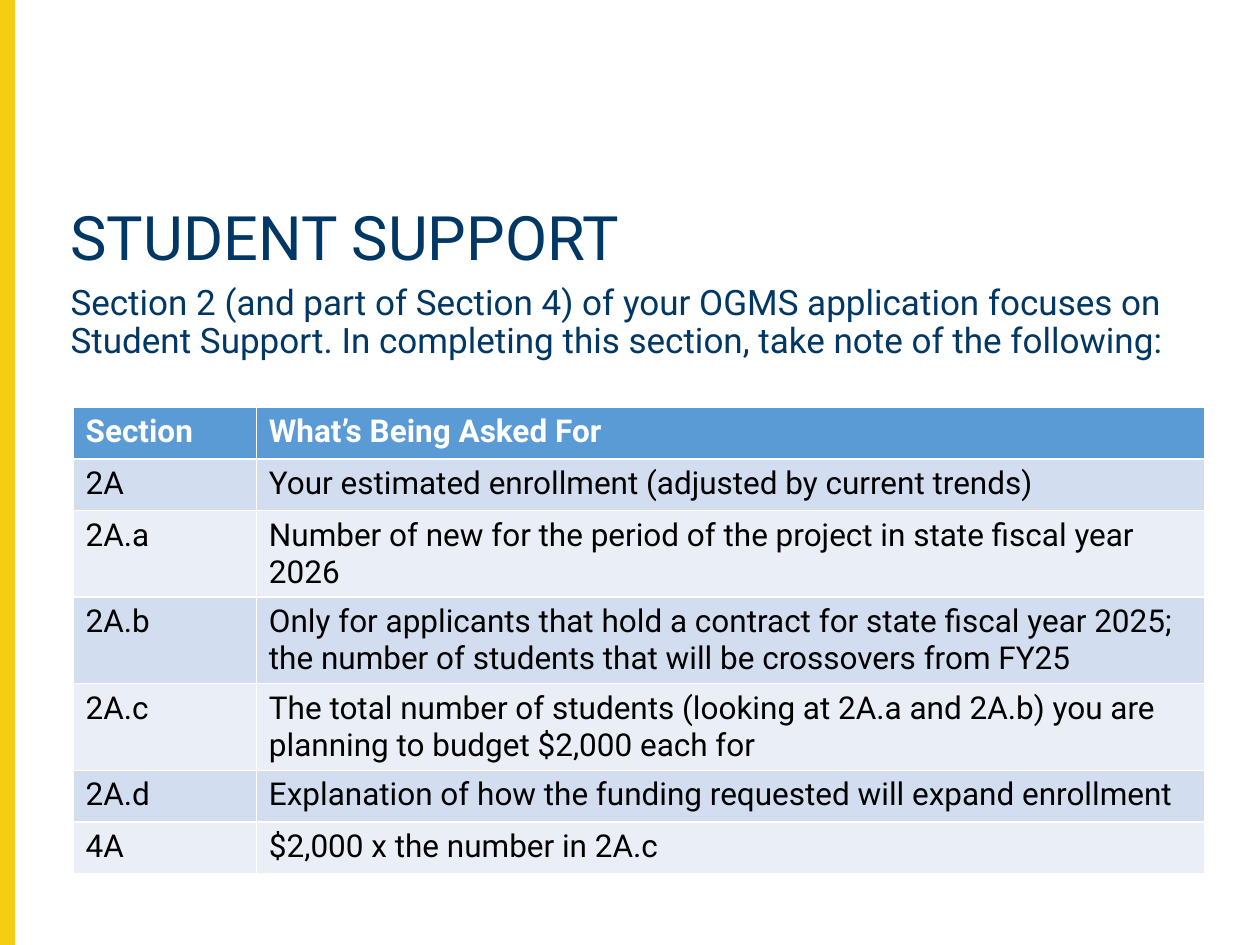
from typing import NamedTuple

from pptx import Presentation
from pptx.dml.color import RGBColor
from pptx.enum.shapes import MSO_SHAPE
from pptx.enum.text import MSO_ANCHOR, MSO_AUTO_SIZE, PP_ALIGN
from pptx.util import Inches, Pt

RECT = MSO_SHAPE.RECTANGLE
TOP = MSO_ANCHOR.TOP
LEFT = PP_ALIGN.LEFT
FIXED = MSO_AUTO_SIZE.NONE

WIDE, HIGH = Inches(10), Inches(7.5)
HEX = {"gold": "F4CE12", "navy": "003764", "head": "5B9BD5", "odd": "D2DEEF",
       "even": "EAEFF7", "white": "FFFFFF", "black": "000000"}
INTRO = ("Section 2 (and part of Section 4) of your OGMS application focuses on "
         "Student Support. In completing this section, take note of the following:")


class Box(NamedTuple):
    """Left, top, width and height as shares of the slide."""
    left: float
    top: float
    width: float
    height: float

    def place(self) -> dict:
        return {"left": round(self.left * WIDE), "top": round(self.top * HIGH),
                "width": round(self.width * WIDE), "height": round(self.height * HIGH)}


class Row(NamedTuple):
    section: str
    ask: str


ROWS = [
    Row("Section", "What’s Being Asked For"),
    Row("2A", "Your estimated enrollment (adjusted by current trends)"),
    Row("2A.a", "Number of new for the period of the project in state fiscal year 2026"),
    Row("2A.b", "Only for applicants that hold a contract for state fiscal year 2025; "
                "the number of students that will be crossovers from FY25"),
    Row("2A.c", "The total number of students (looking at 2A.a and 2A.b) you are "
                "planning to budget $2,000 each for"),
    Row("2A.d", "Explanation of how the funding requested will expand enrollment"),
    Row("4A", "$2,000 x the number in 2A.c"),
]


def assign(item, values: dict) -> None:
    for name, value in values.items():
        setattr(item, name, value)


def color(name: str) -> RGBColor:
    return RGBColor.from_string(HEX[name])


def write(frame, text: str, size: int, tint: str, bold: bool = False) -> None:
    frame.text = text
    font = frame.paragraphs[0].runs[0].font
    assign(font, {"name": "Roboto", "size": Pt(size), "bold": bold})
    font.color.rgb = color(tint)


def fill_holder(holder, box: Box, text: str, size: int) -> None:
    assign(holder, box.place())
    frame = holder.text_frame
    write(frame, text, size, "navy")
    assign(frame, {"vertical_anchor": TOP, "auto_size": FIXED, "word_wrap": True})
    assign(frame.paragraphs[0],
           {"alignment": LEFT, "line_spacing": 0.9, "space_before": Pt(0)})


def add_bar(slide, box: Box) -> None:
    bar = slide.shapes.add_shape(RECT, **box.place())
    bar.shadow.inherit = False
    bar.fill.solid()
    bar.fill.fore_color.rgb = bar.line.color.rgb = color("gold")
    bar.line.width = Pt(1)


def add_grid(slide, box: Box, rows: list[Row], shares: tuple[float, ...]) -> None:
    """The default table style supplies the white cell borders."""
    place = box.place()
    table = slide.shapes.add_table(len(rows), len(shares), **place).table
    for column, share in zip(table.columns, shares):
        column.width = round(place["width"] * share)
    for r, row in enumerate(rows):
        table.rows[r].height = Inches(0.41)
        fill = "head" if r == 0 else "odd" if r % 2 else "even"
        for c, text in enumerate(row):
            cell = table.cell(r, c)
            cell.fill.solid()
            cell.fill.fore_color.rgb = color(fill)
            write(cell.text_frame, text, 18, "black" if r else "white", r == 0)


def main() -> None:
    deck = Presentation()
    assign(deck, {"slide_width": WIDE, "slide_height": HIGH})
    slide = deck.slides.add_slide(deck.slide_layouts[2])
    add_bar(slide, Box(0, 0, 0.011, 1))
    title, body = slide.placeholders
    fill_holder(title, Box(0.046, 0.213, 0.933, 0.105), "STUDENT SUPPORT", 35)
    fill_holder(body, Box(0.046, 0.295, 0.909, 0.123), INTRO, 20)
    add_grid(slide, Box(0.058, 0.431, 0.898, 0.383), ROWS, (0.162, 0.838))
    deck.save("out.pptx")


if __name__ == "__main__":
    main()
